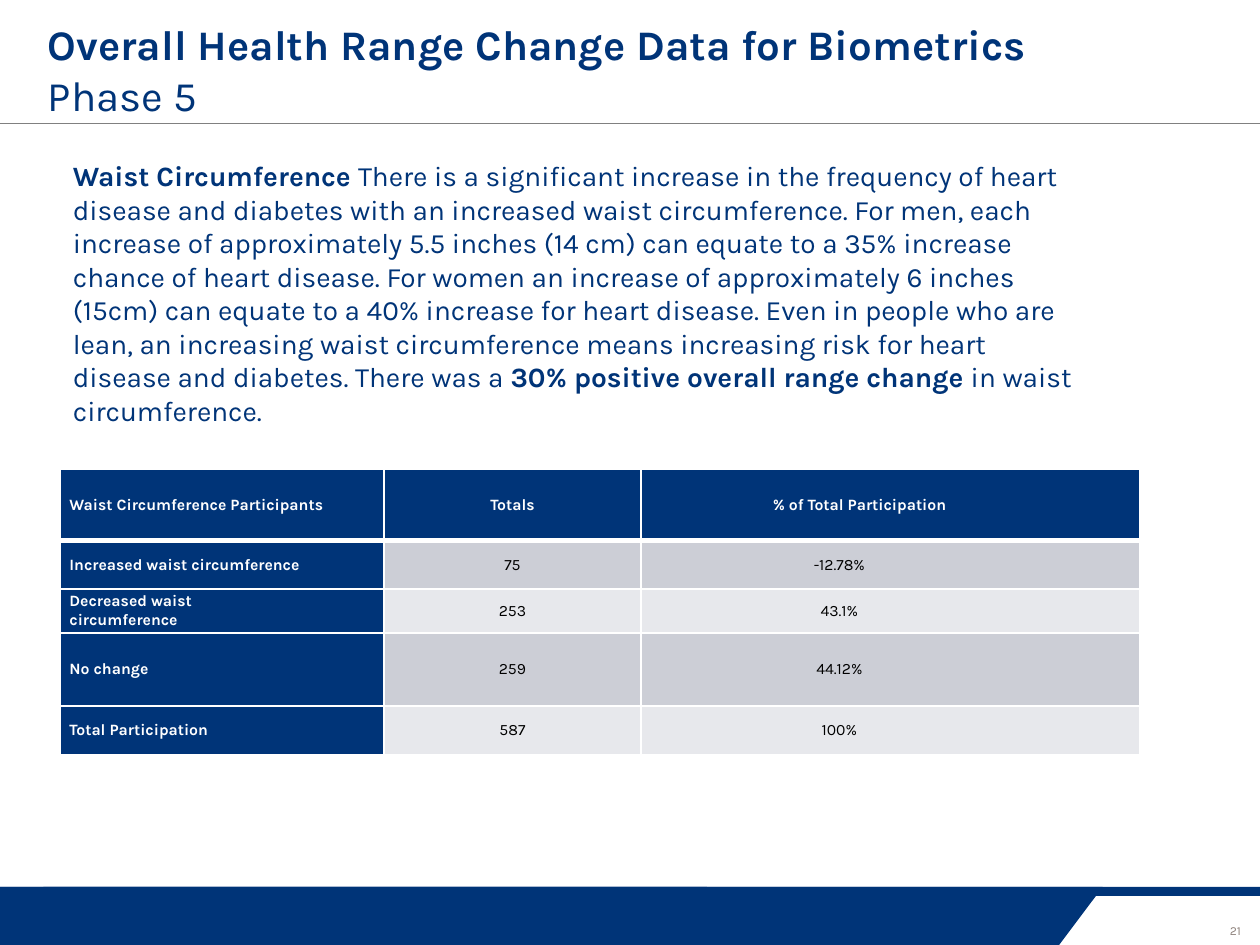
from lxml import etree
from pptx import Presentation
from pptx.dml.color import RGBColor
from pptx.enum.shapes import MSO_CONNECTOR, MSO_SHAPE
from pptx.enum.text import MSO_ANCHOR, PP_ALIGN
from pptx.oxml.ns import qn
from pptx.util import Cm, Pt

LEFT, CENTER = PP_ALIGN.LEFT, PP_ALIGN.CENTER
TOP, MIDDLE = MSO_ANCHOR.TOP, MSO_ANCHOR.MIDDLE
RECTANGLE, PARALLELOGRAM = MSO_SHAPE.RECTANGLE, MSO_SHAPE.PARALLELOGRAM
STRAIGHT = MSO_CONNECTOR.STRAIGHT

TITLE = [("Overall Health Range Change Data for Biometrics", True), ("\n", True), ("Phase 5", False)]
BODY = [
    ("Waist Circumference ", True),
    ("There is a significant increase in the frequency of heart disease and diabetes with an "
     "increased waist circumference. For men, each increase of approximately 5.5 inches (14 cm) "
     "can equate to a 35% increase chance of heart disease. For women an increase of "
     "approximately 6 inches (15cm) can equate to a 40% increase for heart disease. Even in "
     "people who are lean, an increasing waist circumference means increasing risk for heart "
     "disease and diabetes. There was a ", False),
    ("30% positive overall range change ", True),
    ("in waist circumference.", False),
]
ROWS = [
    ("Waist Circumference Participants", "Totals", "% of Total Participation"),
    ("Increased waist circumference", "75", "-12.78%"),
    ("Decreased waist\ncircumference", "253", "43.1%"),
    ("No change", "259", "44.12%"),
    ("Total Participation", "587", "100%"),
]
PAGE_NUMBER = "21"

THEME = {
    "font": "Karla",
    "navy": "003478", "white": "FFFFFF", "black": "000000",
    "rule": "808080", "number": "8D817B", "bands": ("E7E8EC", "CCCED6"),
    "title_size": 24, "body_size": 16, "table_size": 9, "number_size": 7,
}

PAGE_WIDTH, PAGE_HEIGHT = 25.4, 19.05
FOOTER_TOP = 17.88
FOOTER_SHAPES = [
    (RECTANGLE, PAGE_WIDTH, 0.18),
    (PARALLELOGRAM, 22.23, PAGE_HEIGHT - FOOTER_TOP),
    (RECTANGLE, 14.25, PAGE_HEIGHT - FOOTER_TOP),
]
TITLE_AREA = (0.71, 0.25, 23.7, 2.13)
BODY_AREA = (1.22, 3.07, 21.01, 5.74)
NUMBER_AREA = (24.46, 18.49, 0.89, 0.56)
TABLE_LEFT, TABLE_TOP = 1.22, 9.45
COLUMN_WIDTHS = (6.52, 5.18, 10.06)
ROW_HEIGHTS = (1.45, 0.97, 0.89, 1.47, 0.98)
CELL_INSET, LAST_COLUMN_INSET, LAST_HEADER_INSET = 0.18, 2.24, 0.99


def color(key):
    return RGBColor.from_string(THEME.get(key, key))


def set_all(target, values):
    for name, value in values.items():
        setattr(target, name, value)


def area(lengths):
    return [Cm(length) for length in lengths]


def write(para, spans, size, ink):
    """Add (text, bold) spans, where a lone newline is a line break."""
    for text, bold in spans:
        if text == "\n":
            para.add_line_break()
            continue
        span = para.add_run()
        span.text = text
        set_all(span.font, {"name": THEME["font"], "size": Pt(THEME[size]), "bold": bold})
        span.font.color.rgb = color(ink)


def border(cell, side, width):
    line = etree.SubElement(cell._tc.get_or_add_tcPr(), qn("a:" + side), w=str(Pt(width)))
    fill = etree.SubElement(line, qn("a:solidFill"))
    etree.SubElement(fill, qn("a:srgbClr"), val=THEME["white"])


def add_footer(slide):
    for kind, width, height in FOOTER_SHAPES:
        shape = slide.shapes.add_shape(kind, *area((0, FOOTER_TOP, width, height)))
        shape.shadow.inherit = False
        shape.fill.solid()
        shape.fill.fore_color.rgb = color("navy")
        shape.line.fill.background()
        if kind == PARALLELOGRAM:
            shape.adjustments[0] = 0.75


def add_title_rule(slide):
    rule = slide.shapes.add_connector(STRAIGHT, *area((0, 2.49, PAGE_WIDTH, 2.49)))
    rule.line.color.rgb = color("rule")
    rule.line.width = Pt(0.75)
    etree.SubElement(rule._element.spPr, qn("a:effectLst"))


def add_title(slide):
    title = slide.shapes.title
    set_all(title, dict(zip(("left", "top", "width", "height"), area(TITLE_AREA))))
    set_all(title.text_frame, {"vertical_anchor": TOP, "word_wrap": True})
    para = title.text_frame.paragraphs[0]
    para.alignment = LEFT
    write(para, TITLE, "title_size", "navy")


def add_text(slide, place, spans, size, ink, align, wrap):
    box = slide.shapes.add_textbox(*area(place))
    box.text_frame.word_wrap = wrap
    para = box.text_frame.paragraphs[0]
    para.alignment = align
    write(para, spans, size, ink)


def fill_cell(cell, text, row, column):
    heading = row == 0 or column == 0
    last = column == len(COLUMN_WIDTHS) - 1
    set_all(cell, {
        "vertical_anchor": MIDDLE,
        "margin_left": Cm(LAST_HEADER_INSET if last and row == 0 else CELL_INSET),
        "margin_right": Cm(LAST_COLUMN_INSET if last else CELL_INSET),
        "margin_top": 0, "margin_bottom": 0,
    })
    for side in ("lnL", "lnR", "lnT", "lnB"):
        on_header_edge = (row, side) in ((0, "lnB"), (1, "lnT"))
        border(cell, side, 3 if on_header_edge else 1)
    cell.fill.solid()
    cell.fill.fore_color.rgb = color("navy" if heading else THEME["bands"][row % 2])
    para = cell.text_frame.paragraphs[0]
    set_all(para, {
        "alignment": CENTER if column else LEFT,
        "line_spacing": Pt(10.9), "space_after": Pt(0.5),
    })
    first, newline, second = text.partition("\n")
    spans = [(part, heading) for part in (first, newline, second) if part]
    write(para, spans, "table_size", "white" if heading else "black")


def add_results_table(slide):
    place = area((TABLE_LEFT, TABLE_TOP, sum(COLUMN_WIDTHS), sum(ROW_HEIGHTS)))
    table = slide.shapes.add_table(len(ROWS), len(COLUMN_WIDTHS), *place).table
    set_all(table, {"first_col": True, "horz_banding": False})
    for column, width in zip(table.columns, COLUMN_WIDTHS):
        column.width = Cm(width)
    for row, height in zip(table.rows, ROW_HEIGHTS):
        row.height = Cm(height)
    for r, values in enumerate(ROWS):
        for c, text in enumerate(values):
            fill_cell(table.cell(r, c), text, r, c)


def main():
    deck = Presentation()
    set_all(deck, {"slide_width": Cm(PAGE_WIDTH), "slide_height": Cm(PAGE_HEIGHT)})
    slide = deck.slides.add_slide(deck.slide_layouts.get_by_name("Title Only"))
    add_text(slide, NUMBER_AREA, [(PAGE_NUMBER, False)], "number_size", "number", CENTER, False)
    add_title_rule(slide)
    add_footer(slide)
    add_title(slide)
    add_results_table(slide)
    add_text(slide, BODY_AREA, BODY, "body_size", "navy", LEFT, True)
    deck.save("out.pptx")


if __name__ == "__main__":
    main()
